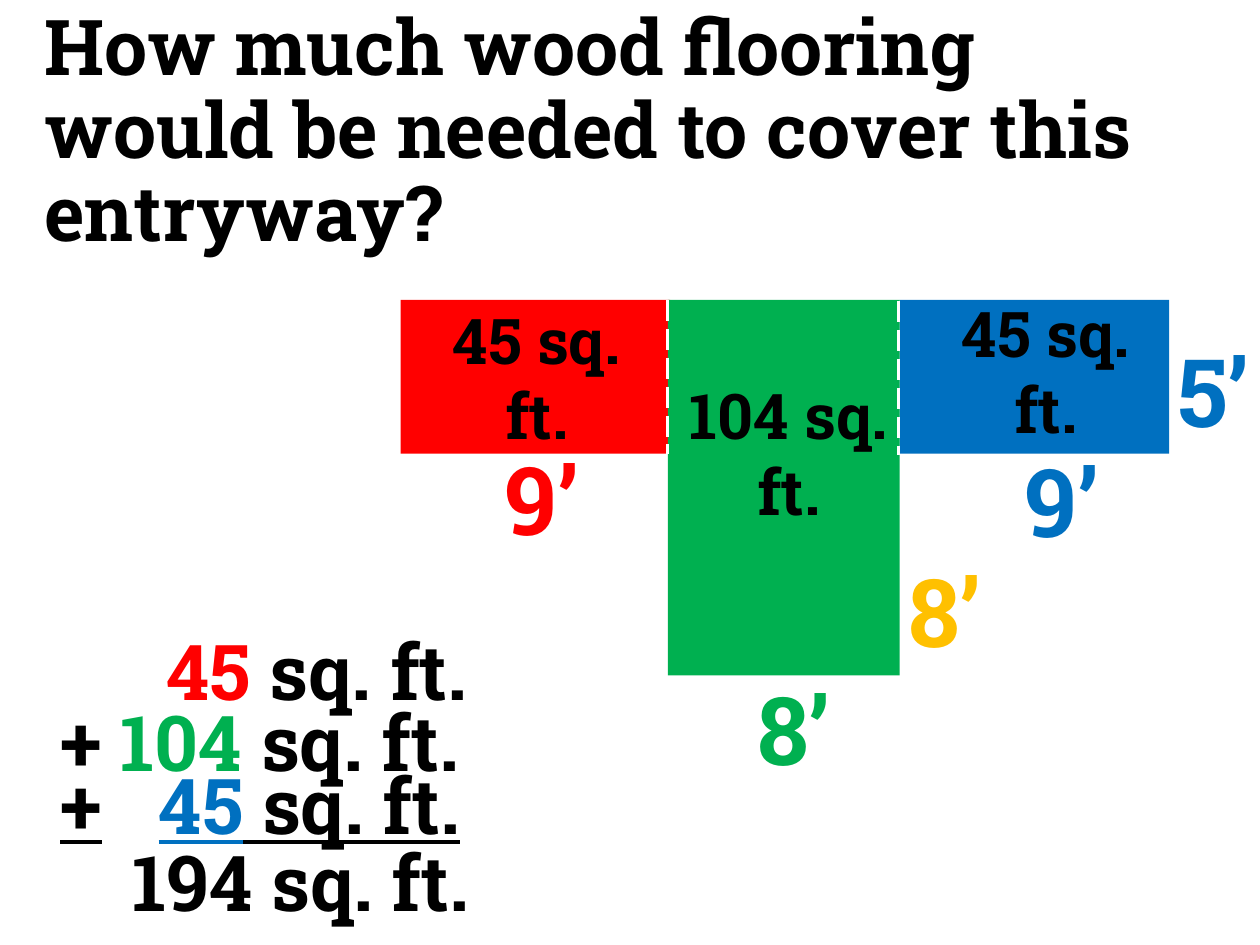
from lxml.etree import SubElement
from pptx import Presentation
from pptx.dml.color import RGBColor
from pptx.enum.dml import MSO_LINE
from pptx.enum.shapes import MSO_CONNECTOR, MSO_SHAPE
from pptx.enum.text import MSO_ANCHOR, PP_ALIGN
from pptx.oxml.ns import qn
from pptx.util import Inches, Pt

C = {"black": "000000", "white": "FFFFFF", "red": "FF0000",
     "green": "00B050", "blue": "0070C0", "gold": "FFC000"}


def add_run(p, text, size, color, underline=None):
    r = p.add_run()
    r.text = text
    r.font.name = "Roboto Slab"
    r.font.size = Pt(size)
    r.font.bold = True
    r.font.underline = underline
    r.font.color.rgb = RGBColor.from_string(C[color])


def add_box(x, y, w, h, align, inset=None):
    tf = s.shapes.add_textbox(Inches(x), Inches(y), Inches(w), Inches(h)).text_frame
    tf.word_wrap = True
    if inset is not None:
        tf.margin_left = tf.margin_right = Inches(inset)
        tf.margin_top = tf.margin_bottom = Inches(inset)
    p = tf.paragraphs[0]
    p.alignment = align
    return p


prs = Presentation()
prs.slide_width, prs.slide_height = Inches(10), Inches(7.5)
s = prs.slides.add_slide(prs.slide_layouts[5])

title = s.shapes.title
title.left, title.top = Inches(0.25), Inches(0.02)
title.width, title.height = Inches(9.17), Inches(1.99)
tf = title.text_frame
tf.word_wrap = True
tf.vertical_anchor = MSO_ANCHOR.TOP
p = tf.paragraphs[0]
p.alignment = PP_ALIGN.LEFT
p.line_spacing = 0.9
add_run(p, "How much wood flooring would be needed to cover this entryway?", 44, "black")

for x, w, h, color in [(3.18, 2.14, 1.22, "red"), (7.14, 2.14, 1.22, "blue"),
                       (5.3, 1.84, 2.98, "green")]:
    sp = s.shapes.add_shape(MSO_SHAPE.RECTANGLE, Inches(x), Inches(2.38), Inches(w), Inches(h))
    sp.shadow.inherit = False
    sp.fill.solid()
    sp.fill.fore_color.rgb = RGBColor.from_string(C[color])
    sp.line.fill.background()

for x, y in [(5.3, 2.38), (7.13, 2.39)]:
    seam = s.shapes.add_connector(MSO_CONNECTOR.STRAIGHT, Inches(x), Inches(y),
                                  Inches(x), Inches(y + 1.22))
    seam.line.color.rgb = RGBColor.from_string(C["white"])
    seam.line.width = Pt(1.5)
    seam.line.dash_style = MSO_LINE.LONG_DASH
    SubElement(seam._element.spPr, qn("a:effectLst"))

for x, y, text, color in [(7.02, 4.34, "8’", "gold"), (7.95, 3.47, "9’", "blue"),
                          (3.82, 3.45, "9’", "red"), (9.15, 2.59, "5’", "blue"),
                          (5.82, 5.28, "8’", "green")]:
    add_run(add_box(x, y, 0.96, 1.01, PP_ALIGN.CENTER), text, 54, color)

for x, y, text in [(3.33, 2.34, "45 sq. ft."), (7.37, 2.29, "45 sq. ft."),
                   (5.33, 2.94, "104 sq. ft.")]:
    add_run(add_box(x, y, 1.86, 1.31, PP_ALIGN.CENTER), text, 36, "black")

for x, y, sign, number, color, underline in [
        (1.32, 4.95, "", "45", "red", None),
        (0.48, 5.51, "+ ", "104", "green", None),
        (0.48, 6.01, "+\t", "45", "blue", True),
        (1.05, 6.62, "", "194", "black", None)]:
    p = add_box(x, y, 3.6, 0.74, PP_ALIGN.LEFT, 0)
    if "\t" in sign:
        tabs = SubElement(p._p.get_or_add_pPr(), qn("a:tabLst"))
        SubElement(tabs, qn("a:tab"), pos=str(Inches(0.78)), algn="l")
    if sign:
        add_run(p, sign, 44, "black", underline)
    add_run(p, number, 44, color, underline)
    add_run(p, " sq. ft.", 44, "black", underline)

prs.save("out.pptx")
